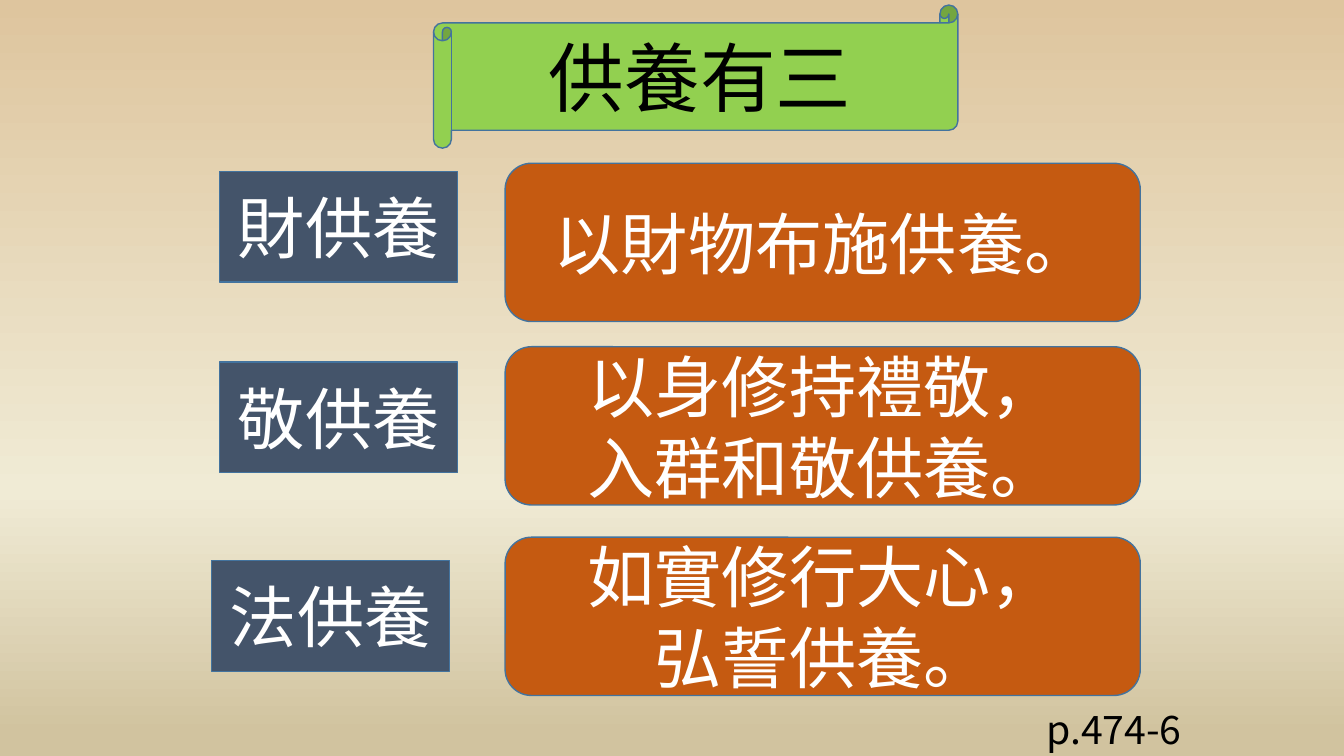
from copy import deepcopy

from lxml import etree
from pptx import Presentation
from pptx.dml.color import RGBColor
from pptx.enum import shapes, text
from pptx.oxml.ns import qn
from pptx.util import Inches, Pt

FONT = "Noto Sans CJK SC"
BACKGROUND = [(0, "DEC59E"), (0.65, "F0EBD5"), (0.97, "D1C39F"), (1, "D1C39F")]
OFFERINGS = [
    ("財供養", 2.18, 1.7, "以財物布施供養。", 1.62),
    ("敬供養", 2.18, 3.59, "以身修持禮敬，\n入群和敬供養。", 3.44),
    ("法供養", 2.1, 5.56, "如實修行大心，\n弘誓供養。", 5.33),
]


def color(value):
    return RGBColor.from_string(value)


def paint_background(page):
    fill = page.background.fill
    fill.gradient()
    fill.gradient_angle = 270
    stop_list = page.element.find(".//" + qn("a:gsLst"))
    while len(stop_list) < len(BACKGROUND):
        stop_list.append(deepcopy(stop_list[-1]))
    for stop, (position, value) in zip(fill.gradient_stops, BACKGROUND):
        stop.position = position
        stop.color.rgb = color(value)


def write(shape, words, size, value, align):
    frame = shape.text_frame
    frame.text = words
    for para in frame.paragraphs:
        para.alignment = align
        for span in para.runs:
            span.font.size = Pt(size)
            span.font.name = FONT
            span.font.color.rgb = color(value)
            properties = span.font._element
            etree.SubElement(properties, qn("a:ea")).set("typeface", FONT)


def add_panel(page, kind, place, fill, words, size=48, ink="FFFFFF"):
    panel = page.shapes.add_shape(kind, *map(Inches, place))
    panel.shadow.inherit = False
    panel.fill.solid()
    panel.fill.fore_color.rgb = color(fill)
    panel.line.color.rgb = color("43739E")
    panel.line.width = Pt(1)
    panel.text_frame.vertical_anchor = text.MSO_ANCHOR.MIDDLE
    write(panel, words, size, ink, text.PP_ALIGN.CENTER)


def add_page_reference(page):
    box = page.shapes.add_textbox(
        Inches(10.28), Inches(6.95), Inches(1.58), Inches(0.57))
    box.text_frame.word_wrap = False
    box.text_frame.auto_size = text.MSO_AUTO_SIZE.SHAPE_TO_FIT_TEXT
    write(box, "p.474-6", 28, "000000", text.PP_ALIGN.LEFT)


def main():
    deck = Presentation()
    deck.slide_width, deck.slide_height = Inches(13.33), Inches(7.5)
    page = deck.slides.add_slide(deck.slide_layouts[6])
    paint_background(page)
    kinds = shapes.MSO_SHAPE
    add_panel(page, kinds.HORIZONTAL_SCROLL, (4.3, 0.05, 5.2, 1.42),
              "92D050", "供養有三", 54, "000000")
    for name, left, top, meaning, meaning_top in OFFERINGS:
        add_panel(page, kinds.RECTANGLE, (left, top, 2.36, 1.1), "44546A", name)
        add_panel(page, kinds.ROUNDED_RECTANGLE, (5.01, meaning_top, 6.3, 1.57),
                  "C55A11", meaning)
    add_page_reference(page)
    deck.save("out.pptx")


if __name__ == "__main__":
    main()
